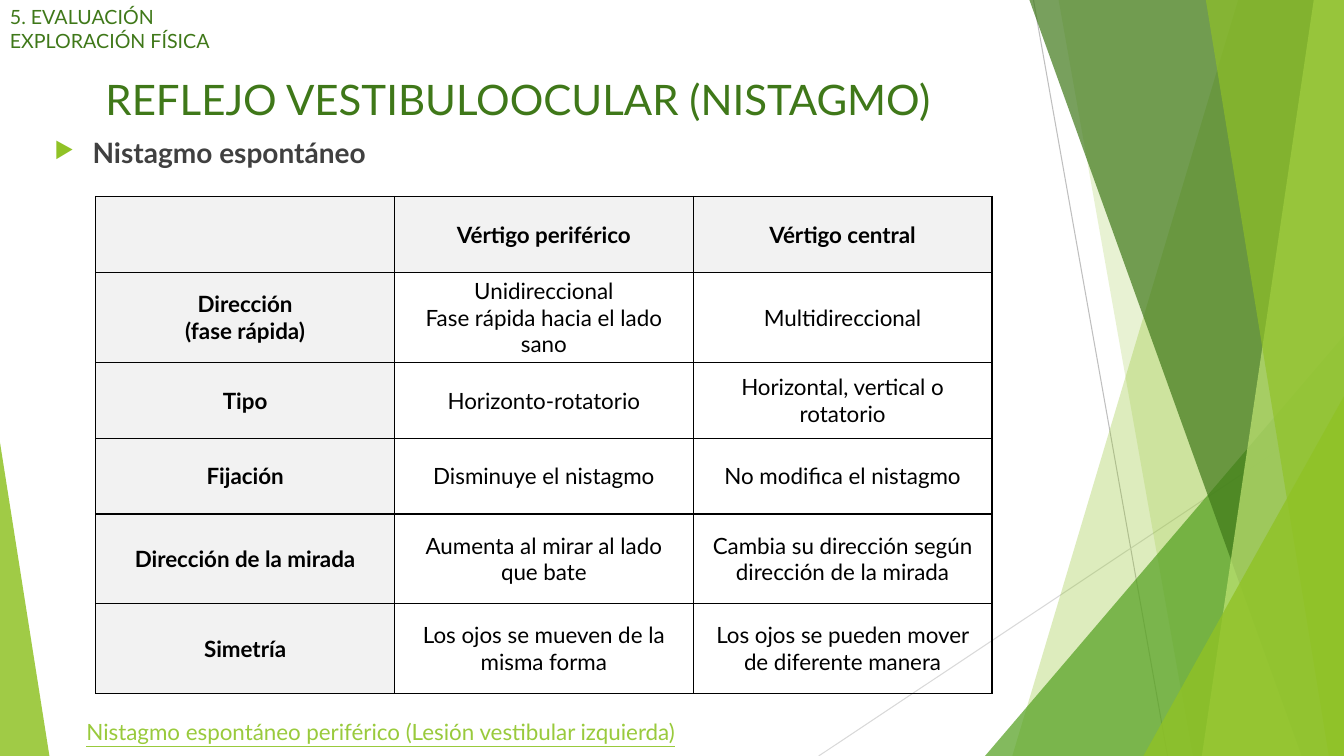
from lxml import etree
from pptx import Presentation
from pptx.dml.color import RGBColor
from pptx.enum.shapes import MSO_CONNECTOR, MSO_SHAPE
from pptx.enum.text import MSO_ANCHOR, PP_ALIGN
from pptx.oxml.ns import qn
from pptx.util import Inches, Pt

STRAIGHT = MSO_CONNECTOR.STRAIGHT
TRIANGLE = MSO_SHAPE.ISOSCELES_TRIANGLE
TOP, MIDDLE = MSO_ANCHOR.TOP, MSO_ANCHOR.MIDDLE
LEFT, CENTER = PP_ALIGN.LEFT, PP_ALIGN.CENTER

LIME = RGBColor(0x90, 0xC2, 0x26)
PALE_LIME = RGBColor(0xC0, 0xE4, 0x74)
GREEN = RGBColor(0x54, 0xA0, 0x21)
DARK_GREEN = RGBColor(0x3F, 0x78, 0x19)
LINK_GREEN = RGBColor(0x99, 0xCA, 0x3C)
CHARCOAL = RGBColor(0x40, 0x40, 0x40)
BLACK = RGBColor(0, 0, 0)
HEADER_GRAY = RGBColor(0xF2, 0xF2, 0xF2)
GRAY = RGBColor(0xBF, 0xBF, 0xBF)
LIGHT_GRAY = RGBColor(0xD9, 0xD9, 0xD9)

FONT = "Lato"
WIDTH, HEIGHT = 13.33, 7.5

SECTION = ["5. EVALUACIÓN", "EXPLORACIÓN FÍSICA"]
TITLE = ["REFLEJO VESTIBULOOCULAR (NISTAGMO)"]
SUBTITLE = ["Nistagmo espontáneo"]
CAPTION = ["Nistagmo espontáneo periférico (Lesión vestibular izquierda)"]
COMPARISON = [
    [[], ["Vértigo periférico"], ["Vértigo central"]],
    [["Dirección", "(fase rápida)"],
     ["Unidireccional", "Fase rápida hacia el lado sano"], ["Multidireccional"]],
    [["Tipo"], ["Horizonto-rotatorio"], ["Horizontal, vertical o rotatorio"]],
    [["Fijación"], ["Disminuye el nistagmo"], ["No modifica el nistagmo"]],
    [["Dirección de la mirada"], ["Aumenta al mirar al lado que bate"],
     ["Cambia su dirección según dirección de la mirada"]],
    [["Simetría"], ["Los ojos se mueven de la misma forma"],
     ["Los ojos se pueden mover de diferente manera"]],
]
TABLE_LEFT, TABLE_TOP, COLUMN_WIDTH = 0.95, 1.95, 2.963
ROW_HEIGHTS = [0.75, 0.89, 0.75, 0.75, 0.89, 0.89]

# start, end, colour
THIN_LINES = [
    ((10.25, 0), (11.58, HEIGHT), GRAY),
    ((WIDTH, 4.03), (8.12, HEIGHT), LIGHT_GRAY),
]
# Bands reach the right edge: x at the top, x at the bottom, colour, opacity %
# Wedges stand on the bottom edge: left, width, height, apex, colour, opacity %
DECORATION = [
    ("band", 12.28, 10.04, LIME, 30),
    ("band", 10.5, 11.83, LIME, 20),
    ("wedge", 9.77, 3.56, 4.17, 1, GREEN, 72),
    ("band", 10.21, 12.91, DARK_GREEN, 70),
    ("band", 13.03, 11.92, PALE_LIME, 70),
    ("band", 11.96, 13.18, LIME, 65),
    ("wedge", 11.34, 1.99, 3.57, 1, LIME, 80),
    ("wedge", 0, 0.49, 3.11, 0, LIME, 85),
]


def paint(shape, color, opacity):
    shape.shadow.inherit = False
    shape.line.fill.background()
    shape.fill.solid()
    shape.fill.fore_color.rgb = color
    tint = shape.fill._xPr.find(qn("a:solidFill"))[0]
    etree.SubElement(tint, qn("a:alpha")).set("val", str(opacity * 1000))


def add_band(page, top_x, bottom_x, color, opacity):
    builder = page.shapes.build_freeform(Inches(top_x), 0)
    corners = [(WIDTH, 0), (WIDTH, HEIGHT), (bottom_x, HEIGHT)]
    builder.add_line_segments([(Inches(x), Inches(y)) for x, y in corners])
    paint(builder.convert_to_shape(), color, opacity)


def add_wedge(page, left, width, height, apex, color, opacity):
    wedge = page.shapes.add_shape(TRIANGLE, Inches(left), Inches(HEIGHT - height),
                                  Inches(width), Inches(height))
    wedge.adjustments[0] = apex
    paint(wedge, color, opacity)


def add_thin_line(page, start, end, color):
    line = page.shapes.add_connector(STRAIGHT, *[Inches(v) for v in start + end])
    line.line.color.rgb = color
    line.line.width = Pt(0.75)
    etree.SubElement(line._element.spPr, qn("a:effectLst"))


def write(frame, lines, size, color, align=LEFT, bold=False, underline=False):
    for index, line in enumerate(lines):
        para = frame.add_paragraph() if index else frame.paragraphs[0]
        para.alignment = align
        span = para.add_run()
        span.text = line
        span.font.name = FONT
        span.font.size = Pt(size)
        span.font.color.rgb = color
        span.font.bold = bold
        span.font.underline = underline


def add_text(page, place, lines, size, color, anchor=TOP, **style):
    box = page.shapes.add_textbox(*[Inches(v) for v in place])
    frame = box.text_frame
    frame.word_wrap = True
    frame.vertical_anchor = anchor
    write(frame, lines, size, color, **style)
    return frame


def add_arrow_bullet(para):
    props = para._p.get_or_add_pPr()
    props.set("marL", str(Inches(0.38)))
    props.set("indent", str(Inches(-0.38)))
    tint = etree.SubElement(props, qn("a:buClr"))
    etree.SubElement(tint, qn("a:srgbClr")).set("val", str(LIME))
    etree.SubElement(props, qn("a:buSzPct")).set("val", "80000")
    etree.SubElement(props, qn("a:buChar")).set("char", "▶")


def add_borders(cell):
    props = cell._tc.get_or_add_tcPr()
    for index, side in enumerate(("lnL", "lnR", "lnT", "lnB")):
        border = etree.Element(qn("a:" + side), w=str(Pt(1)))
        fill = etree.SubElement(border, qn("a:solidFill"))
        etree.SubElement(fill, qn("a:srgbClr")).set("val", str(BLACK))
        props.insert(index, border)


def add_comparison(page):
    columns = len(COMPARISON[0])
    table = page.shapes.add_table(
        len(COMPARISON), columns, Inches(TABLE_LEFT), Inches(TABLE_TOP),
        Inches(COLUMN_WIDTH * columns), Inches(sum(ROW_HEIGHTS))).table
    table.first_row = table.horz_banding = False
    for column in table.columns:
        column.width = Inches(COLUMN_WIDTH)
    for r, (texts, height) in enumerate(zip(COMPARISON, ROW_HEIGHTS)):
        table.rows[r].height = Inches(height)
        for c, lines in enumerate(texts):
            cell = table.cell(r, c)
            is_header = r == 0 or c == 0
            cell.vertical_anchor = MIDDLE
            if is_header:
                cell.fill.solid()
                cell.fill.fore_color.rgb = HEADER_GRAY
            else:
                cell.fill.background()
            add_borders(cell)
            write(cell.text_frame, lines, 16, BLACK, align=CENTER, bold=is_header)


def main():
    deck = Presentation()
    deck.slide_width, deck.slide_height = Inches(WIDTH), Inches(HEIGHT)
    page = deck.slides.add_slide(deck.slide_layouts[6])
    for start, end, color in THIN_LINES:
        add_thin_line(page, start, end, color)
    builders = {"band": add_band, "wedge": add_wedge}
    for kind, *details in DECORATION:
        builders[kind](page, *details)
    add_text(page, (0.44, 0.65, 9.4, 0.65), TITLE, 30, DARK_GREEN,
             anchor=MIDDLE, align=CENTER)
    add_text(page, (0, 0, 5.64, 0.65), SECTION, 14, DARK_GREEN)
    subtitle = add_text(page, (0.44, 1.3, 9.74, 0.44), SUBTITLE, 20, CHARCOAL, bold=True)
    add_arrow_bullet(subtitle.paragraphs[0])
    add_comparison(page)
    add_text(page, (0.76, 7.08, 9.74, 0.37), CAPTION, 16, LINK_GREEN, underline=True)
    deck.save("out.pptx")


if __name__ == "__main__":
    main()
